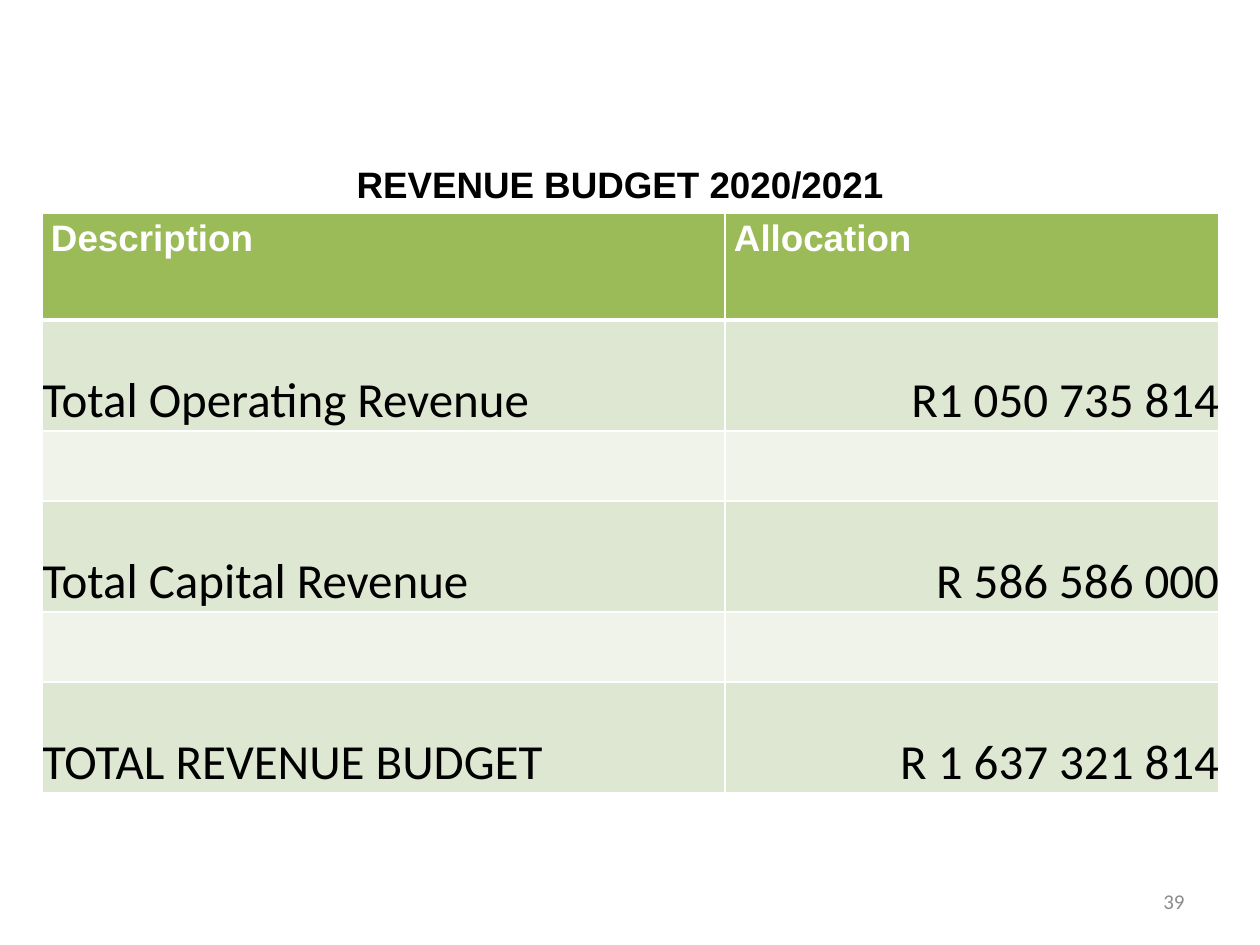
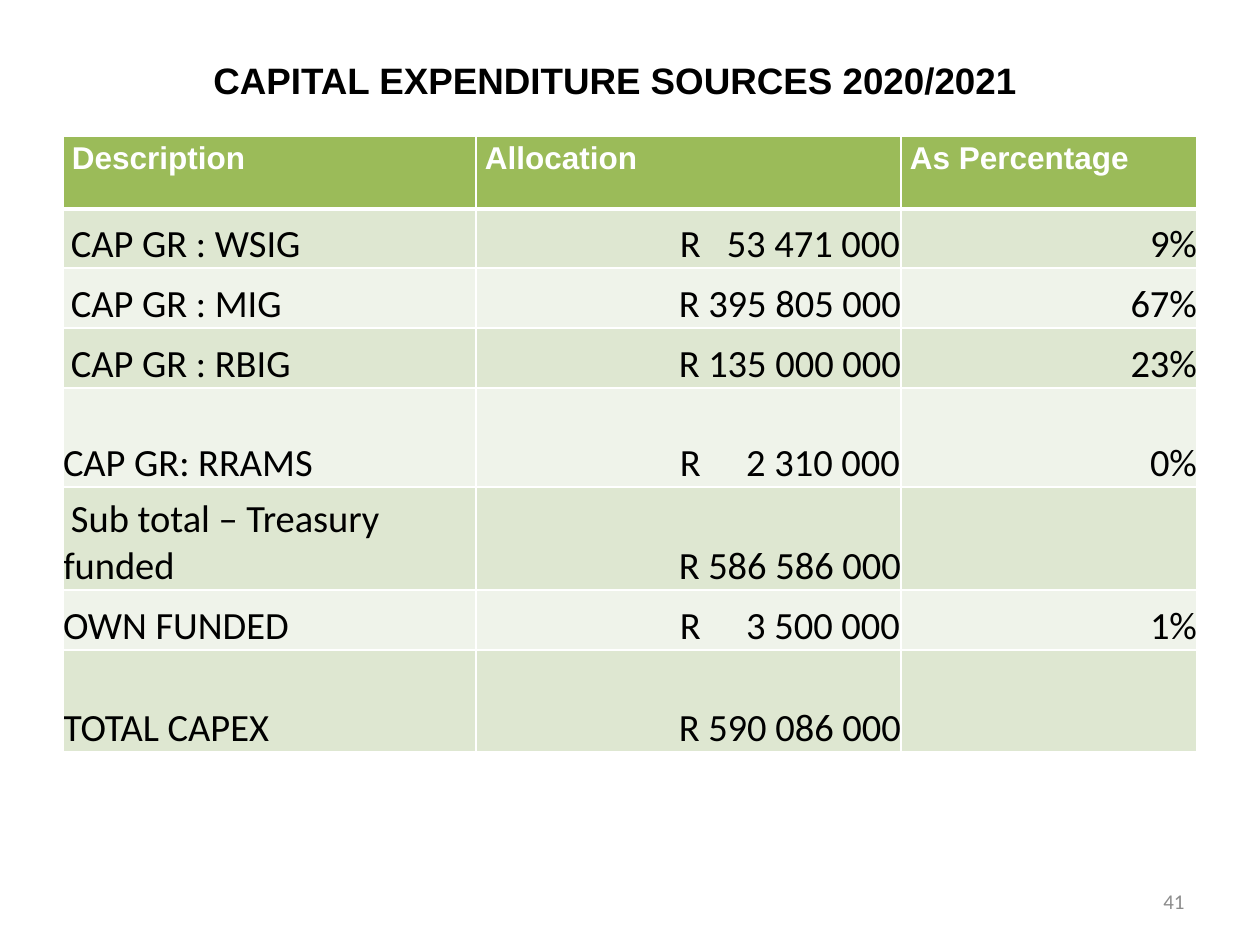
from lxml.etree import SubElement
from pptx import Presentation
from pptx.dml.color import RGBColor
from pptx.enum.text import MSO_ANCHOR, PP_ALIGN
from pptx.oxml.ns import qn
from pptx.util import Pt

WHITE, BLACK, GREY = "FFFFFF", "000000", "8C8C8C"
HEADER_GREEN = "9BBB59"
BANDS = ("DEE7D1", "EFF3EA")
FIRST_LINE_INDENT = 8
CURRENCY_STOP = 204  # where a currency sign set apart from its amount starts

SLIDES = [
    {
        "title": "REVENUE BUDGET 2020/2021",
        "title_at": (204, 146),
        "number": "39",
        "table_at": (42, 213),
        "columns": (683, 494),
        "row_heights": (107, 111, 70, 111, 70, 111),
        "header_size": 21,
        "body_size": 28,
        "header": ("Description", "Allocation"),
        "body": [
            ("Total Operating Revenue", "R1 050 735 814"),
            ("", ""),
            ("Total Capital Revenue", "R 586 586 000"),
            ("", ""),
            ("TOTAL REVENUE BUDGET", "R 1 637 321 814"),
        ],
        "indented_rows": (),
    },
    {
        "title": "CAPITAL EXPENDITURE SOURCES 2020/2021",
        "title_at": (199, 42),
        "number": "41",
        "table_at": (63, 136),
        "columns": (413, 425, 296),
        "row_heights": (73, 59, 60, 60, 99, 103, 60, 102),
        "header_size": 18,
        "body_size": 22,
        "header": ("Description", "Allocation", "As Percentage"),
        "body": [
            ("CAP GR : WSIG", "\tR\t53 471 000", "9%"),
            ("CAP GR : MIG", "R 395 805 000", "67%"),
            ("CAP GR : RBIG", "R 135 000 000", "23%"),
            ("CAP GR: RRAMS", "\tR\t2 310 000", "0%"),
            ("Sub total – Treasury funded", "R 586 586 000", ""),
            ("OWN FUNDED", "\tR\t3 500 000", "1%"),
            ("TOTAL CAPEX", "R 590 086 000", ""),
        ],
        "indented_rows": (1, 2, 3, 5),
    },
]


def px(length):
    return round(length * 914400 / 126)


def rgb(hex_colour):
    return RGBColor.from_string(hex_colour)


def add_run(paragraph, text, size, colour, font="Calibri", bold=False):
    run = paragraph.add_run()
    run.text = text
    run.font.name, run.font.size, run.font.bold = font, Pt(size), bold
    run.font.color.rgb = rgb(colour)


def add_label(slide, box, anchor, align, text, *style):
    frame = slide.shapes.add_textbox(*map(px, box)).text_frame
    frame.word_wrap = True
    frame.vertical_anchor = anchor
    frame.paragraphs[0].alignment = align
    add_run(frame.paragraphs[0], text, *style)
    return frame


def set_margins(box, left, top, right, bottom):
    box.margin_left, box.margin_top = px(left), px(top)
    box.margin_right, box.margin_bottom = px(right), px(bottom)


def paint_cell(cell, fill, top_width, bottom_width):
    """Draw white borders, then the fill, which must follow them in the XML."""
    properties = cell._tc.get_or_add_tcPr()
    widths = {"a:lnL": 1, "a:lnR": 1, "a:lnT": top_width, "a:lnB": bottom_width}
    for tag, width in widths.items():
        line = SubElement(properties, qn(tag), w=str(Pt(width)))
        SubElement(SubElement(line, qn("a:solidFill")), qn("a:srgbClr"), val=WHITE)
    cell.fill.solid()
    cell.fill.fore_color.rgb = rgb(fill)


def add_tab_stops(paragraph, column_width):
    stops = SubElement(paragraph._p.get_or_add_pPr(), qn("a:tabLst"))
    for position, align in ((CURRENCY_STOP, "l"), (column_width - 1, "r")):
        SubElement(stops, qn("a:tab"), pos=str(px(position)), algn=align)


def fill_header_cell(cell, text, size):
    paint_cell(cell, HEADER_GREEN, 1, 3)
    set_margins(cell, 9, 5, 9, 5)
    add_run(cell.text_frame.paragraphs[0], text, size, WHITE, "Arial", True)


def fill_body_cell(cell, text, size, row, column, column_width, indented):
    paint_cell(cell, BANDS[(row - 1) % 2], 3 if row == 1 else 1, 1)
    set_margins(cell, 0, 0, 0, 0)
    cell.vertical_anchor = MSO_ANCHOR.BOTTOM
    if not text:
        return
    paragraph = cell.text_frame.paragraphs[0]
    if "\t" in text:
        add_tab_stops(paragraph, column_width)
    elif column:
        paragraph.alignment = PP_ALIGN.RIGHT
    elif indented:
        paragraph._p.get_or_add_pPr().set("indent", str(px(FIRST_LINE_INDENT)))
    add_run(paragraph, text, size, BLACK)


def add_budget_table(slide, content):
    columns, heights = content["columns"], content["row_heights"]
    box = (*content["table_at"], sum(columns), sum(heights))
    table = slide.shapes.add_table(len(heights), len(columns), *map(px, box)).table
    for column, width in zip(table.columns, columns):
        column.width = px(width)
    for row, height in zip(table.rows, heights):
        row.height = px(height)
    for column, text in enumerate(content["header"]):
        fill_header_cell(table.cell(0, column), text, content["header_size"])
    for row, texts in enumerate(content["body"], 1):
        for column, text in enumerate(texts):
            fill_body_cell(table.cell(row, column), text, content["body_size"],
                           row, column, columns[column],
                           row in content["indented_rows"])


def main():
    deck = Presentation()
    deck.slide_width, deck.slide_height = px(1260), px(945)
    for content in SLIDES:
        slide = deck.slides.add_slide(deck.slide_layouts[6])
        title = add_label(slide, (*content["title_at"], 850, 82), MSO_ANCHOR.TOP,
                          PP_ALIGN.CENTER, content["title"], 21, BLACK, "Arial", True)
        set_margins(title, 13, 16, 31, 6)
        add_label(slide, (903, 876, 294, 50), MSO_ANCHOR.MIDDLE, PP_ALIGN.RIGHT,
                  content["number"], 12, GREY)
        add_budget_table(slide, content)
    deck.save("out.pptx")


if __name__ == "__main__":
    main()
